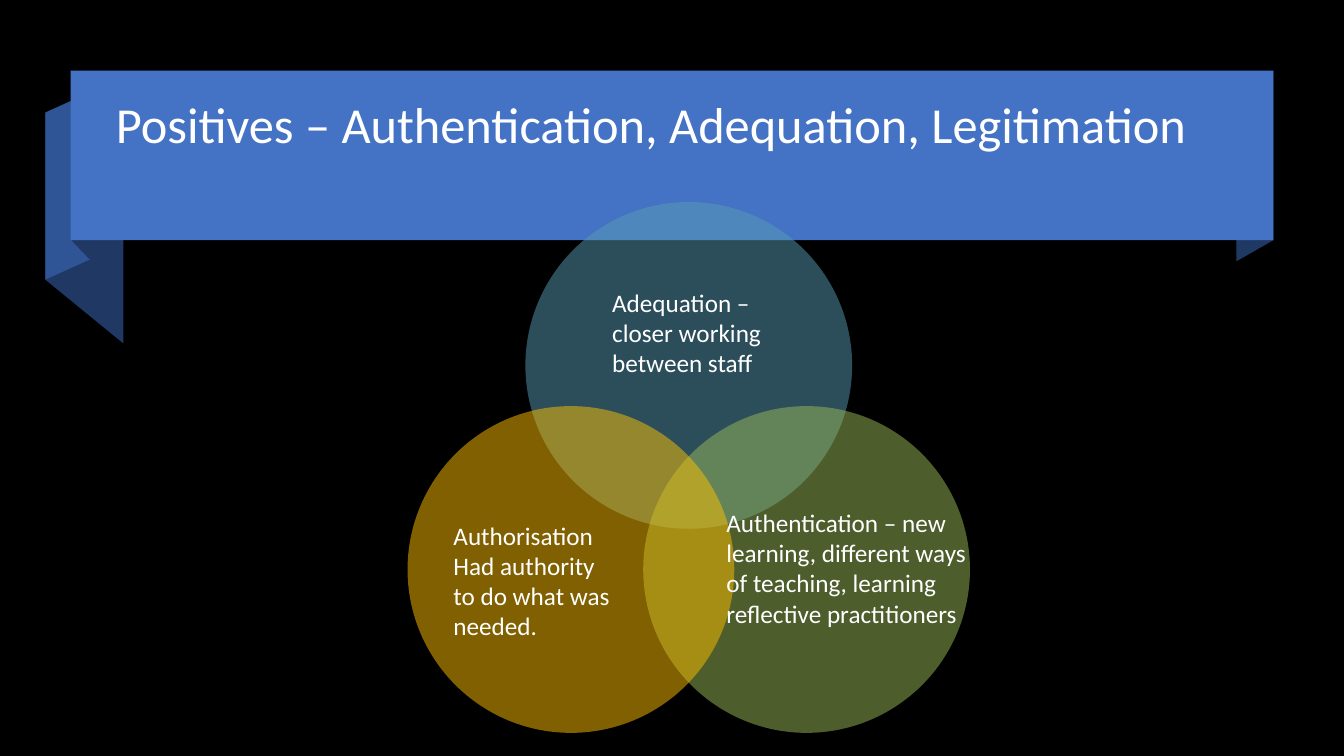
from math import cos, radians, sin

from lxml.etree import SubElement as Sub
from pptx import Presentation as Deck
from pptx.dml.color import RGBColor as RGB
from pptx.enum.shapes import MSO_SHAPE as Kind
from pptx.enum.text import MSO_ANCHOR as Anchor, MSO_AUTO_SIZE as Fit
from pptx.oxml.ns import qn
from pptx.util import Pt

BLACK = RGB(0x00, 0x00, 0x00)
WHITE = RGB(0xFF, 0xFF, 0xFF)
BLUE = RGB(0x44, 0x72, 0xC4)
MID = RGB(0x2F, 0x55, 0x97)
NAVY = RGB(0x20, 0x38, 0x64)
TEAL = RGB(0x58, 0x9D, 0xB6)
GREEN = RGB(0x9B, 0xBB, 0x59)
GOLD = RGB(0xFF, 0xC0, 0x00)

COLS, ROWS = 160, 90
CELL = 76200

HEAD = {"size": Pt(36), "name": "Calibri"}
BODY = {"size": Pt(18), "name": "Calibri"}


def grid(*cells):
    return [round(cell * CELL) for cell in cells]


class Board:
    def __init__(self, deck, back):
        self.slide = deck.slides.add_slide(deck.slide_layouts[6])
        self.shapes = self.slide.shapes
        fill = self.slide.background.fill
        fill.solid()
        fill.fore_color.rgb = back

    def paint(self, shape, color, alpha=None):
        shape.shadow.inherit = False
        shape.fill.solid()
        shape.fill.fore_color.rgb = color
        shape.line.fill.background()
        if alpha is not None:
            tint = shape.fill._xPr.find(".//" + qn("a:srgbClr"))
            Sub(tint, qn("a:alpha"), val=str(alpha * 1000))

    def fold(self, left, right, start, end, tall, color):
        first, *rest = [grid(*spot) for spot in (
            (left, start), (right, end),
            (right, end + tall), (left, start + tall))]
        path = self.shapes.build_freeform(*first, scale=1.0)
        path.add_line_segments(rest, close=True)
        self.paint(path.convert_to_shape(), color)

    def band(self, box, color):
        self.paint(self.shapes.add_shape(Kind.RECTANGLE, *grid(*box)), color)

    def disc(self, x, y, size, color):
        box = grid(x - size / 2, y - size / 2, size, size)
        self.paint(self.shapes.add_shape(Kind.OVAL, *box), color, 50)

    def text(self, box, lines, style, frame, space=None):
        body = self.shapes.add_textbox(*grid(*box)).text_frame
        for key, value in frame.items():
            setattr(body, key, value)
        body.text = "\n".join(lines)
        for para in body.paragraphs:
            para.line_spacing = space
            for key, value in style.items():
                setattr(para.font, key, value)
            para.font.color.rgb = WHITE


def main():
    deck = Deck()
    deck.slide_width, deck.slide_height = grid(COLS, ROWS)
    board = Board(deck, BLACK)

    for fold in (
        (5.4, 14.7, 13.4, 21, 19.9, NAVY),
        (5.4, 10.7, 13.4, 11, 19.9, MID),
        (8.5, 10.7, 8.4, 10.7, 20.2, NAVY),
        (147.2, 151.6, 10.9, 8.4, 20.2, NAVY),
    ):
        board.fold(*fold)
    board.band((8.4, 8.4, 143.2, 20.2), BLUE)
    board.text((12.6, 10.6, 134.8, 16),
               ["Positives – Authentication, Adequation, Legitimation"], HEAD,
               {"word_wrap": True, "vertical_anchor": Anchor.TOP,
                "margin_top": Pt(8)}, 0.9)

    for turn, color in ((-90, TEAL), (30, GREEN), (150, GOLD)):
        angle = radians(turn)
        board.disc(82 + 16.2 * cos(angle), 59.7 + 16.2 * sin(angle), 38.9, color)

    for box, lines in (
        ((71.7, 33.6, 22.3, 12.1),
         ["Adequation – closer working between staff"]),
        ((85.3, 59.8, 33.8, 15.7),
         ["Authentication – new learning, different ways of teaching, "
          "learning reflective practitioners"]),
        ((52.8, 61.3, 22, 15.7),
         ["Authorisation", "Had authority to do what was needed."]),
    ):
        board.text(box, lines, BODY,
                   {"word_wrap": True, "auto_size": Fit.SHAPE_TO_FIT_TEXT})

    deck.save("out.pptx")


if __name__ == "__main__":
    main()
